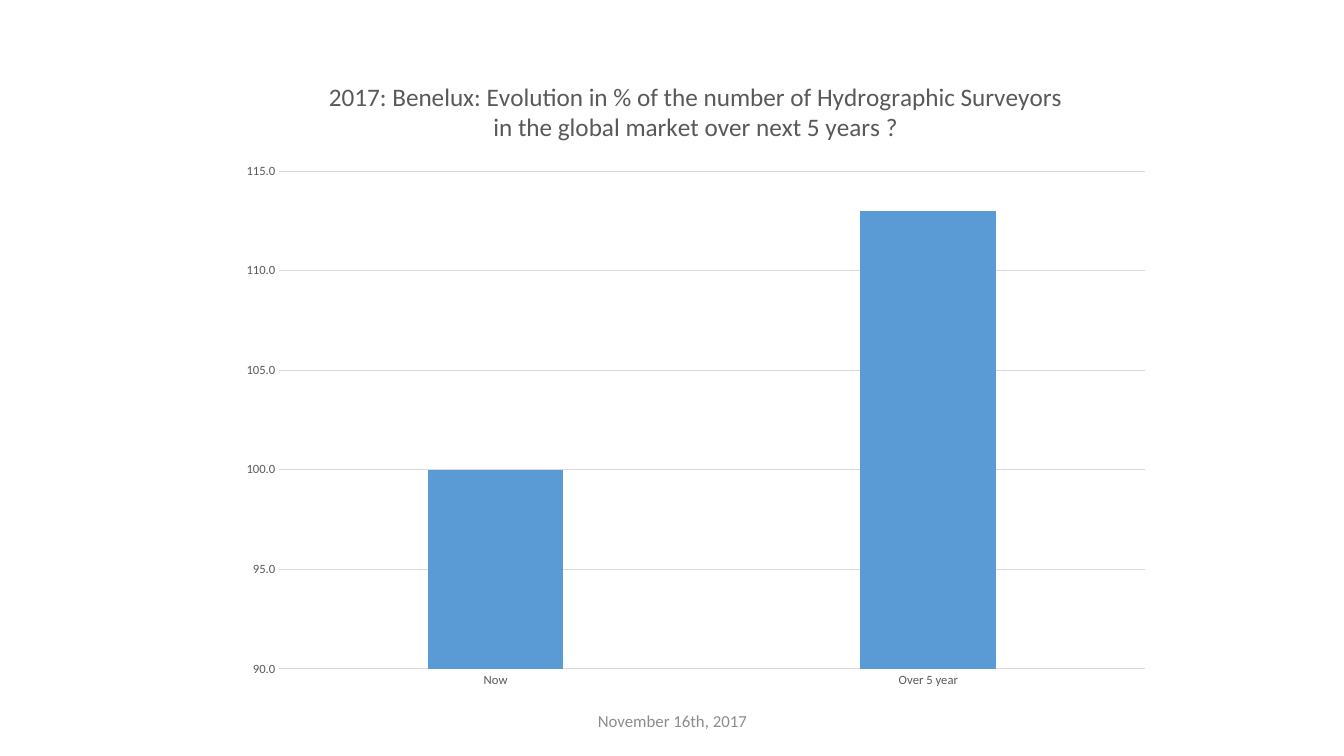
from lxml import etree
from pptx import Presentation
from pptx.chart.data import CategoryChartData
from pptx.dml.color import RGBColor
from pptx.enum import chart as ch, text as tx
from pptx.util import Inches, Pt

# Content
TITLE = ("2017: Benelux: Evolution in % of the number of Hydrographic Surveyors "
         "in the global market over next 5 years ?")
SURVEYORS = {"Now": 100, "Over 5 year": 113}
SERIES_NAME = "Series 1"
DATE = "November 16th, 2017"

# Style and places (left, top, width, height in inches)
FONT = "Calibri"
COLORS = {"bar": "5B9BD5", "label": "595959", "grid": "D9D9D9", "date": "8C8C8C"}
CHART_BOX = (2.26, 0.56, 9.28, 6.39)
DATE_BOX = (4.42, 6.95, 4.5, 0.4)
PLOT_SHARES = {"x": 0.055, "y": 0.178, "w": 0.925, "h": 0.773}


def style_font(font, size, color):
    font.name, font.size, font.bold = FONT, Pt(size), False
    font.color.rgb = RGBColor.from_string(COLORS[color])


def style_line(line):
    line.color.rgb = RGBColor.from_string(COLORS["grid"])
    line.width = Pt(0.75)


def place_plot(chart):
    """Fix the inner plot area as shares of the chart."""
    plot_area = chart._chartSpace.chart.plotArea
    ns = plot_area.nsmap["c"]
    for old in plot_area.findall(f"{{{ns}}}layout"):
        plot_area.remove(old)
    layout = etree.Element(f"{{{ns}}}layout")
    manual = etree.SubElement(layout, f"{{{ns}}}manualLayout")
    settings = {"layoutTarget": "inner", "xMode": "edge", "yMode": "edge", **PLOT_SHARES}
    for tag, value in settings.items():
        etree.SubElement(manual, f"{{{ns}}}{tag}").set("val", str(value))
    plot_area.insert(0, layout)


def add_survey_chart(slide):
    data = CategoryChartData(number_format="0.0")
    data.categories = list(SURVEYORS)
    data.add_series(SERIES_NAME, list(SURVEYORS.values()))
    chart = slide.shapes.add_chart(
        ch.XL_CHART_TYPE.COLUMN_CLUSTERED, *map(Inches, CHART_BOX), data).chart
    chart.font.name, chart.font.size = FONT, Pt(10)
    chart.has_legend = False

    # Title
    chart.has_title = True
    heading = chart.chart_title.text_frame
    heading.text = TITLE
    style_font(heading.paragraphs[0].runs[0].font, 18, "label")
    chart.chart_title.include_in_layout = False

    # Bars
    bars = chart.plots[0]
    bars.gap_width = 219
    bars.vary_by_categories = False
    fill = bars.series[0].format.fill
    fill.solid()
    fill.fore_color.rgb = RGBColor.from_string(COLORS["bar"])

    # Axes
    periods, percent = chart.category_axis, chart.value_axis
    for axis in (periods, percent):
        axis.major_tick_mark = axis.minor_tick_mark = ch.XL_TICK_MARK.NONE
        style_font(axis.tick_labels.font, 9, "label")
    style_line(periods.format.line)
    percent.format.line.fill.background()
    percent.has_major_gridlines = True
    style_line(percent.major_gridlines.format.line)
    percent.minimum_scale, percent.maximum_scale, percent.major_unit = 90, 115, 5
    percent.tick_labels.number_format = "0.0"
    percent.tick_labels.number_format_is_linked = False
    place_plot(chart)


def add_date(slide):
    frame = slide.shapes.add_textbox(*map(Inches, DATE_BOX)).text_frame
    frame.word_wrap = True
    frame.vertical_anchor = tx.MSO_ANCHOR.MIDDLE
    frame.text = DATE
    line = frame.paragraphs[0]
    line.alignment = tx.PP_ALIGN.CENTER
    style_font(line.runs[0].font, 12, "date")


def main():
    prs = Presentation()
    prs.slide_width, prs.slide_height = Inches(13.33), Inches(7.5)
    slide = prs.slides.add_slide(prs.slide_layouts[6])
    add_date(slide)
    add_survey_chart(slide)
    prs.save("out.pptx")


if __name__ == "__main__":
    main()
